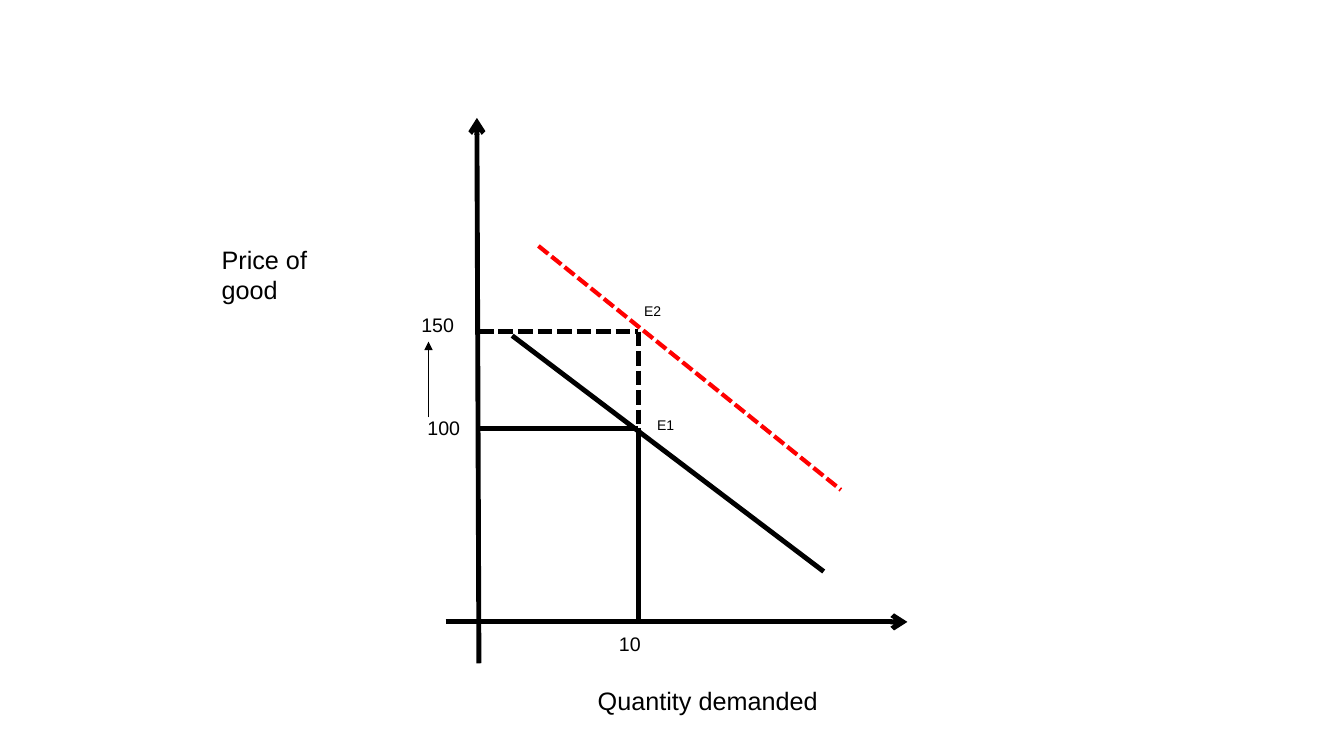
from lxml.etree import SubElement
from pptx import Presentation
from pptx.dml.color import RGBColor
from pptx.enum.dml import MSO_LINE
from pptx.enum.shapes import MSO_CONNECTOR as CONNECTOR
from pptx.enum.text import MSO_AUTO_SIZE as AUTO_SIZE
from pptx.oxml.ns import qn
from pptx.util import Pt

PX = 9144
BLACK, RED = "000000", "FF0000"
AXIS_X, AXIS_Y = 475, 617
QUANTITY, OLD_PRICE, NEW_PRICE = 633, 425, 329


def color(hex_code):
    return RGBColor.from_string(hex_code)


deck = Presentation()
deck.slide_width, deck.slide_height = 1333 * PX, 750 * PX
slide = deck.slides.add_slide(deck.slide_layouts[6])

price_axis = (AXIS_X, 658, 473, 117, BLACK, 3.5, False, "arrow")
quantity_axis = (442, AXIS_Y, 900, AXIS_Y, BLACK, 3.5, False, "arrow")
demand = (508, 333, 817, 567, BLACK, 3.5, False, None)
old_price_level = (AXIS_X, OLD_PRICE, QUANTITY, OLD_PRICE, BLACK, 3.5, False, None)
quantity_level = (QUANTITY, OLD_PRICE, QUANTITY, AXIS_Y, BLACK, 3.5, False, None)
shifted_demand = (534, 244, 834, 486, RED, 3, True, None)
new_price_level = (AXIS_X, NEW_PRICE, QUANTITY, NEW_PRICE, BLACK, 3.5, True, None)
new_quantity_level = (QUANTITY, NEW_PRICE, QUANTITY, 521, BLACK, 3.5, True, None)
price_rise = (425, 414, 425, 339, BLACK, 0.75, False, "triangle")

for x1, y1, x2, y2, hue, weight, dashed, arrowhead in (
    price_axis, quantity_axis, demand, old_price_level, quantity_level,
    shifted_demand, new_price_level, new_quantity_level, price_rise,
):
    stroke = slide.shapes.add_connector(
        CONNECTOR.STRAIGHT, x1 * PX, y1 * PX, x2 * PX, y2 * PX)
    stroke.line.color.rgb = color(hue)
    stroke.line.width = Pt(weight)
    if dashed:
        stroke.line.dash_style = MSO_LINE.SQUARE_DOT
    if arrowhead:
        SubElement(stroke.line._get_or_add_ln(), qn("a:tailEnd"), type=arrowhead)
    SubElement(stroke._element.spPr, qn("a:effectLst"))

for wording, left, top, width, height, size in (
    ("Quantity demanded", 583, 675, 242, 40, 18),
    ("Price of good", 210, 237, 166, 71, 18),
    ("100", 414, 408, 61, 33, 14),
    ("10", 604, 622, 75, 34, 14),
    ("E2", 629, 295, 67, 27, 10),
    ("E1", 642, 408, 67, 27, 10),
    ("150", 408, 306, 61, 33, 14),
):
    label = slide.shapes.add_textbox(left * PX, top * PX, width * PX, height * PX)
    frame = label.text_frame
    frame.text = wording
    frame.word_wrap = True
    frame.auto_size = AUTO_SIZE.SHAPE_TO_FIT_TEXT
    font = frame.paragraphs[0].runs[0].font
    font.name = "Arial"
    font.size = Pt(size)
    font.color.rgb = color(BLACK)

deck.save("out.pptx")
